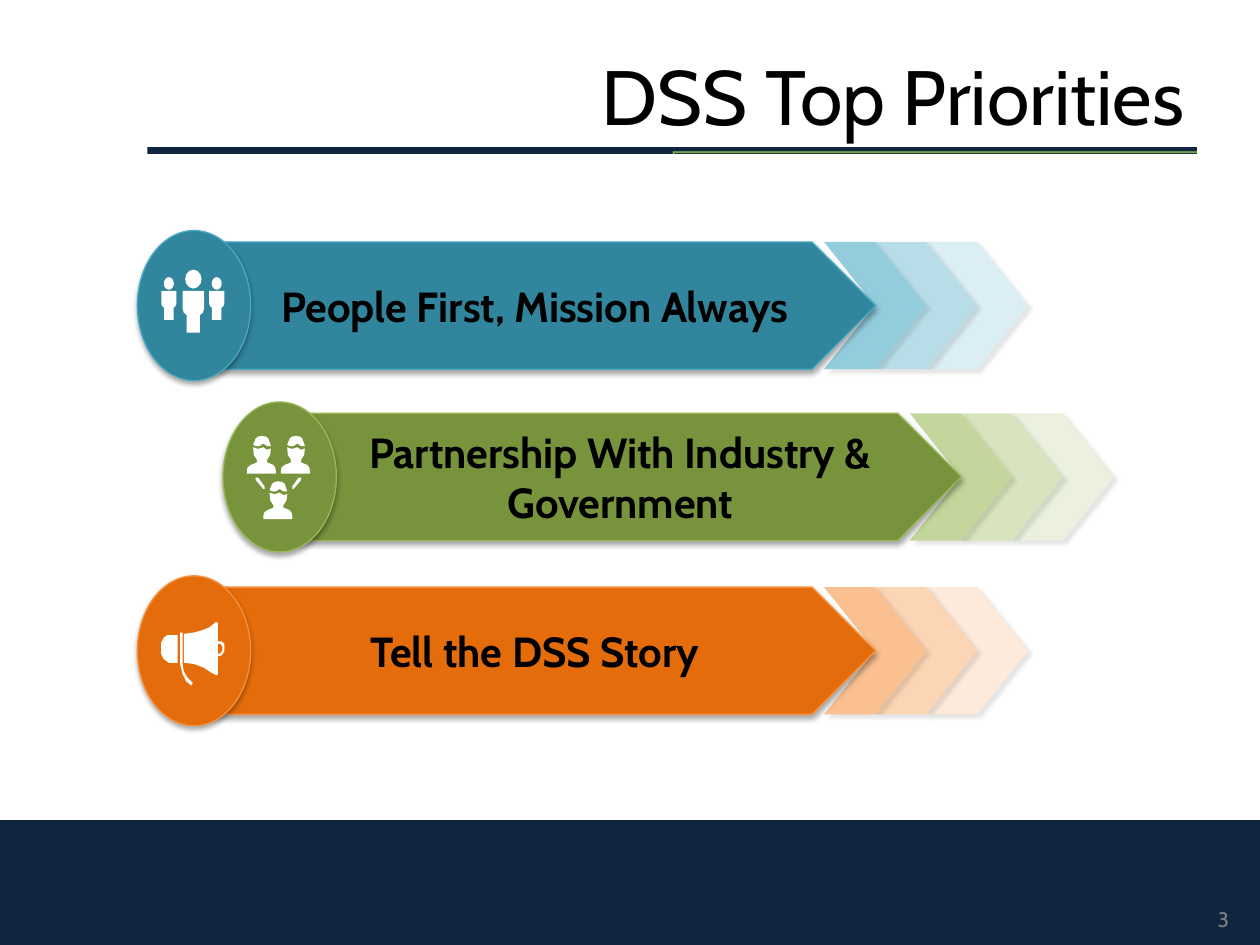
from dataclasses import dataclass

from lxml import etree
from pptx import Presentation
from pptx.dml.color import RGBColor
from pptx.enum.shapes import MSO_SHAPE
from pptx.enum.text import MSO_ANCHOR, PP_ALIGN
from pptx.oxml import parse_xml
from pptx.oxml.ns import nsdecls, qn
from pptx.util import Inches, Pt

RECT, OVAL = MSO_SHAPE.RECTANGLE, MSO_SHAPE.OVAL
ARROW, CHEVRON = MSO_SHAPE.PENTAGON, MSO_SHAPE.CHEVRON
MIDDLE = MSO_ANCHOR.MIDDLE
CENTER, RIGHT = PP_ALIGN.CENTER, PP_ALIGN.RIGHT


@dataclass(frozen=True)
class Theme:
    font: str = "Cabin"
    navy: str = "10253F"
    lime: str = "92D050"
    ink: str = "000000"
    white: str = "FFFFFF"
    gray: str = "808080"
    title: int = 44
    body: int = 24
    small: int = 12
    # Fill, line, then chevron tints from near to far
    teal: tuple = ("31859C", "46AAC5", "93CDDD", "B7DEE8", "DBEEF4")
    green: tuple = ("77933C", "98B955", "C3D69B", "D7E4BD", "EBF1DE")
    orange: tuple = ("E46C0A", "F69240", "FAC090", "FCD5B5", "FDEADA")


THEME = Theme()
# Shadows: opacity %, blur pt, distance pt, angle
DEEP = (35, 3.1, 1.8, 90)
SOFT = (10, 2, 3, 40)

# Icon outlines; a body in shares of its box, the rest in 1/100 inch
BODY = [(0, 0), (1, 0), (1, .42), (.95, .52), (.81, .58), (.81, 1),
        (.19, 1), (.19, .58), (.05, .52), (0, .42)]
BUST = [(5, 0), (9, 1.3), (13, 0), (16, 2), (19, 1), (18.5, 6), (16, 10),
        (16, 12), (21, 14), (22.5, 16), (23, 19), (23, 21), (0, 21),
        (0, 19), (.5, 16), (3, 14), (8, 12), (8, 10), (5.5, 6)]
HAIR = [(5, -2), (7, -7), (9, -8.5), (12, -9), (15, -8.5), (17, -7),
        (19, -1), (16, -1), (13, -3), (10, -1), (7, -1)]
LINK = [(0, 0), (2, 0), (7, 7), (7, 9), (6, 9), (0, 2)]
HORN = [(37, 46), (45, 45), (52, 43), (57, 41), (62, 37), (64, 37), (64, 52),
        (67, 52), (69, 54), (69, 60), (67, 63), (64, 64), (64, 78), (63, 79),
        (59, 77), (53, 73), (45, 70), (37, 69)]
GRIP = [(64, 54), (66, 54), (67.5, 56), (67.5, 59), (66, 61.5), (64, 62)]
BASE = [(32, 47), (24, 47), (21, 49), (19, 53), (19, 62), (21, 66), (25, 69),
        (32, 69)]
CORD = [(34, 45), (36, 45), (36, 70), (37, 76), (40, 81), (44, 85), (43, 87),
        (39, 84), (36, 78), (34, 70)]


def paint(shape, fill, line=None, shadow=None):
    shape.shadow.inherit = False
    shape.fill.solid()
    shape.fill.fore_color.rgb = RGBColor.from_string(fill)
    if line:
        shape.line.color.rgb = RGBColor.from_string(line)
        shape.line.width = Pt(0.75)
    else:
        shape.line.fill.background()
    if shadow:
        alpha, blur, dist, angle = shadow
        effects = shape._element.spPr.find(qn("a:effectLst"))
        outer = etree.SubElement(
            effects, qn("a:outerShdw"), blurRad=str(Pt(blur)),
            dist=str(Pt(dist)), dir=str(angle * 60000), rotWithShape="0")
        color = etree.SubElement(outer, qn("a:srgbClr"), val=THEME.ink)
        etree.SubElement(color, qn("a:alpha"), val=str(alpha * 1000))


def block(shapes, kind, box, fill, line=None, shadow=None):
    shape = shapes.add_shape(kind, *map(Inches, box))
    paint(shape, fill, line, shadow)
    return shape


def write(shape, text, size, color, align, bold=False):
    frame = shape.text_frame
    frame.word_wrap = True
    frame.vertical_anchor = MIDDLE
    para = frame.paragraphs[0]
    para.text = text
    para.alignment = align
    para.font.name, para.font.size, para.font.bold = THEME.font, Pt(size), bold
    para.font.color.rgb = RGBColor.from_string(color)
    return frame


def trace(shapes, left, top, *loops, wide=.01, high=.01):
    """Draw white closed loops, scaled and moved to left, top."""
    pen = None
    for loop in loops:
        pts = [(Inches(left + x * wide), Inches(top + y * high))
               for x, y in loop]
        if pen is None:
            pen = shapes.build_freeform(*pts[0])
        else:
            pen.move_to(*pts[0])
        pen.add_line_segments(pts[1:], close=True)
    paint(pen.convert_to_shape(), THEME.white)


def crowd(shapes, left, top):
    # Body box, then head box
    for body, head in (((.19, .48, .12, .23), (.21, .37, .08, .1)),
                       ((.57, .48, .12, .23), (.59, .37, .08, .1)),
                       ((.36, .48, .17, .33), (.38, .31, .13, .15))):
        x, y, w, h = body
        trace(shapes, left + x, top + y, BODY, wide=w, high=h)
        x, y, w, h = head
        block(shapes, OVAL, (left + x, top + y, w, h), THEME.white)


def team(shapes, left, top):
    for x, y in ((.19, .36), (.46, .36), (.32, .72)):
        trace(shapes, left + x, top + y, BUST)
        trace(shapes, left + x, top + y, HAIR)
    trace(shapes, left + .26, top + .6, LINK)
    trace(shapes, left + .62, top + .6, LINK, wide=-.01)


def speaker(shapes, left, top):
    trace(shapes, left, top, HORN, GRIP)
    trace(shapes, left, top, BASE)
    trace(shapes, left, top, CORD)


def banner(slide, box, text, tones, icon):
    left, top, wide, high = box
    fill, line, *tints = tones
    shapes = slide.shapes.add_group_shape().shapes
    bar, tall = top + .09, high - .18
    # Trailing chevrons, far one at the back
    size = .81
    for step, tint in reversed(list(enumerate(tints))):
        x = left + wide - size - (2 - step) * size / 2
        block(shapes, CHEVRON, (x, bar, size, tall), tint, shadow=SOFT)
    # Labelled arrow
    arrow = block(shapes, ARROW, (left + .33, bar, 5.53, tall),
                  fill, line, DEEP)
    frame = write(arrow, text, THEME.body, THEME.ink, CENTER, True)
    frame.margin_left, frame.margin_right = Inches(.5), Inches(.13)
    frame.margin_top = frame.margin_bottom = Inches(.07)
    # Badge with icon
    block(shapes, OVAL, (left, top, .9, high), fill, line, DEEP)
    icon(shapes, left, top)


def header(slide, box):
    left, top, wide, high = box
    # Rule with a gradient that starts at its lower right corner
    rule = block(slide.shapes, RECT, (left, top + .92, wide, .05), THEME.navy)
    stops = "".join(
        f'<a:gs pos="{pos}"><a:srgbClr val="{tone}"/></a:gs>'
        for pos, tone in ((0, THEME.navy), (50000, THEME.lime),
                          (100000, THEME.navy)))
    blend = parse_xml(
        f'<a:gradFill {nsdecls("a")}><a:gsLst>{stops}</a:gsLst>'
        '<a:path path="rect"><a:fillToRect l="100000" t="100000"/></a:path>'
        '</a:gradFill>')
    props = rule._element.spPr
    props.replace(props.find(qn("a:solidFill")), blend)
    # Title
    title = slide.shapes.add_textbox(*map(Inches, box))
    write(title, "DSS Top Priorities", THEME.title, THEME.ink, RIGHT)


def footer(slide, box):
    left, top, wide, high = box
    block(slide.shapes, RECT, box, THEME.navy)
    number = slide.shapes.add_textbox(
        *map(Inches, (left + wide - .5, top + .66, .42, .25)))
    write(number, "3", THEME.small, THEME.gray, CENTER)


def main():
    deck = Presentation()
    deck.slide_width, deck.slide_height = Inches(10), Inches(7.5)
    slide = deck.slides.add_slide(deck.slide_layouts[6])
    footer(slide, (0, 6.51, 10, 1))
    header(slide, (1.17, .25, 8.33, 1))
    for left, top, text, tones, icon in (
            (1.09, 1.83, "People First, Mission Always", THEME.teal, crowd),
            (1.77, 3.19, "Partnership With Industry & Government",
             THEME.green, team),
            (1.09, 4.57, "Tell the DSS Story", THEME.orange, speaker)):
        banner(slide, (left, top, 7.07, 1.19), text, tones, icon)
    deck.save("out.pptx")


if __name__ == "__main__":
    main()
